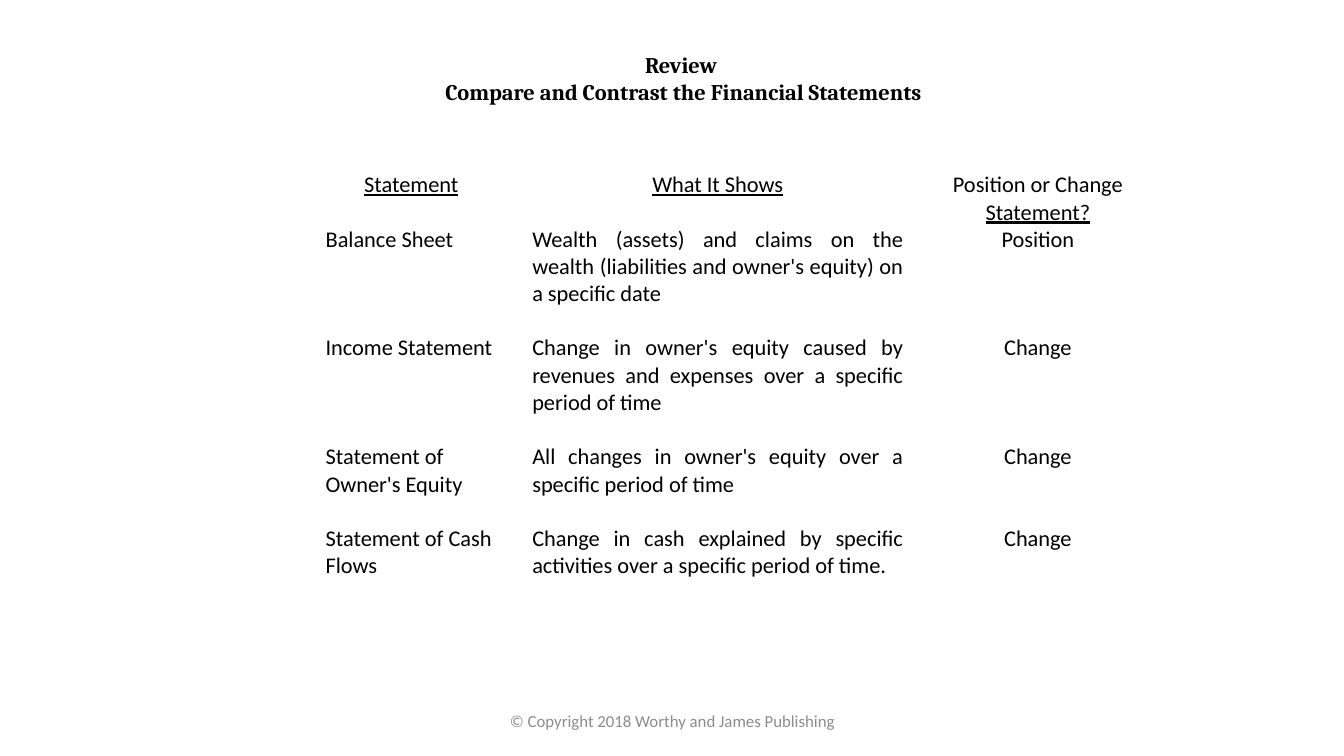
from dataclasses import dataclass
from lxml.etree import SubElement
from pptx import Presentation
from pptx.dml.color import RGBColor
from pptx.enum.text import MSO_ANCHOR, PP_ALIGN
from pptx.oxml.ns import qn
from pptx.util import Inches, Pt


@dataclass(frozen=True)
class Theme:
    ink: RGBColor = RGBColor(0, 0, 0)
    gray: RGBColor = RGBColor(0x8C, 0x8C, 0x8C)
    head: str = "Cambria"
    body: str = "Calibri"
    main: int = 16
    small: int = 12


THEME = Theme()
COLS = [1.84, 0.21, 3.82, 0.28, 1.97]
ALIGNS = [PP_ALIGN.LEFT, PP_ALIGN.JUSTIFY, PP_ALIGN.CENTER]
LINE = 0.27
HEADS = [
    [("Statement", True)],
    [("What It Shows", True)],
    [("Position or Change ", False), ("Statement?", True)],
]
ROWS = [
    (3, "Balance Sheet",
     "Wealth (assets) and claims on the wealth (liabilities and owner's equity) on a specific date",
     "Position"),
    (3, "Income Statement",
     "Change in owner's equity caused by revenues and expenses over a specific period of time",
     "Change"),
    (2, "Statement of Owner's Equity",
     "All changes in owner's equity over a specific period of time",
     "Change"),
    (2, "Statement of Cash Flows",
     "Change in cash explained by specific activities over a specific period of time.",
     "Change"),
]


def add_run(para, text, face, size, color, bold=False, line=False):
    run = para.add_run()
    run.text = text
    font = run.font
    font.name, font.size, font.bold, font.underline = face, Pt(size), bold, line
    font.color.rgb = color


def add_box(slide, box, anchor):
    frame = slide.shapes.add_textbox(*map(Inches, box)).text_frame
    frame.word_wrap = True
    frame.vertical_anchor = anchor
    return frame


def add_title(slide, box):
    frame = add_box(slide, box, MSO_ANCHOR.TOP)
    first, second = frame.paragraphs[0], frame.add_paragraph()
    lines = ["Review ", "Compare and Contrast the Financial Statements"]
    for para, text in zip((first, second), lines):
        para.alignment = PP_ALIGN.CENTER
        add_run(para, text, THEME.head, THEME.main, THEME.ink, bold=True)


def add_foot(slide, box):
    para = add_box(slide, box, MSO_ANCHOR.MIDDLE).paragraphs[0]
    para.alignment = PP_ALIGN.CENTER
    add_run(para, "© Copyright 2018 Worthy and James Publishing",
            THEME.body, THEME.small, THEME.gray)


def fill_cell(cell, parts, align):
    para = cell.text_frame.paragraphs[0]
    para.alignment = align
    for text, line in parts:
        add_run(para, text, THEME.body, THEME.main, THEME.ink, line=line)


def add_grid(slide, box):
    count = 1 + 2 * len(ROWS)
    shape = slide.shapes.add_table(count, len(COLS), *map(Inches, box))
    table = shape.table
    table.first_row = table.horz_banding = False
    for col, width in zip(table.columns, COLS):
        col.width = Inches(width)
    for row in table.rows:
        row.height = Inches(LINE)
    table.rows[0].height = Inches(2 * LINE)

    for col, parts in enumerate(HEADS):
        fill_cell(table.cell(0, 2 * col), parts, PP_ALIGN.CENTER)
    for index, (lines, *texts) in enumerate(ROWS):
        place = 1 + 2 * index
        table.rows[place].height = Inches(lines * LINE)
        for col, (text, align) in enumerate(zip(texts, ALIGNS)):
            fill_cell(table.cell(place, 2 * col), [(text, False)], align)

    for cell in table.iter_cells():
        cell.fill.background()
        cell.margin_left = cell.margin_right = Inches(0.07)
        cell.margin_top = cell.margin_bottom = 0
        if not cell.text:
            para = cell.text_frame.paragraphs[0]
            end = SubElement(para._p, qn("a:endParaRPr"))
            end.set("sz", str(THEME.main * 100))
            SubElement(end, qn("a:latin")).set("typeface", THEME.body)


def main():
    deck = Presentation()
    deck.slide_width, deck.slide_height = Inches(13.33), Inches(7.5)
    slide = deck.slides.add_slide(deck.slide_layouts[6])
    add_foot(slide, (4.42, 6.95, 4.5, 0.4))
    add_grid(slide, (3.16, 1.7, sum(COLS), 4.27))
    add_title(slide, (-0.35, 0.46, 14.26, 0.94))
    deck.save("out.pptx")


if __name__ == "__main__":
    main()
